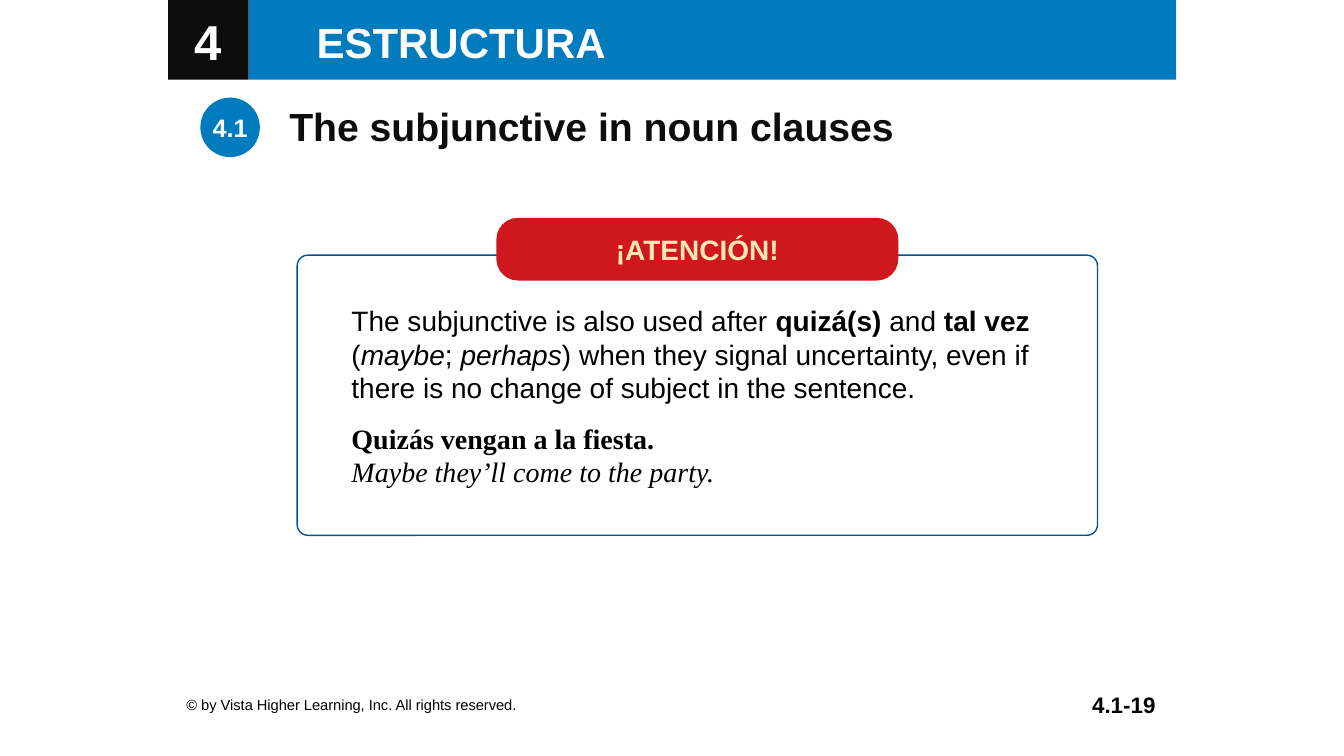
from dataclasses import dataclass

from lxml import etree
from pptx import Presentation
from pptx.dml.color import RGBColor
from pptx.enum.shapes import MSO_SHAPE
from pptx.enum.text import MSO_ANCHOR, MSO_AUTO_SIZE, PP_ALIGN
from pptx.oxml.ns import qn
from pptx.util import Cm, Pt

RECT, OVAL, ROUND = MSO_SHAPE.RECTANGLE, MSO_SHAPE.OVAL, MSO_SHAPE.ROUNDED_RECTANGLE
TOP, MIDDLE = MSO_ANCHOR.TOP, MSO_ANCHOR.MIDDLE
LEFT, CENTER, RIGHT = PP_ALIGN.LEFT, PP_ALIGN.CENTER, PP_ALIGN.RIGHT
FIXED = MSO_AUTO_SIZE.NONE


@dataclass(frozen=True)
class Theme:
    sans: str = "Arial"
    serif: str = "Times New Roman"
    blue: str = "007BBE"
    navy: str = "005297"
    red: str = "CE181E"
    cream: str = "FFE7B6"
    ink: str = "0D0D0D"
    black: str = "000000"
    white: str = "FFFFFF"
    unit: float = 35
    strand: float = 30
    title: float = 28
    body: float = 20
    label: float = 18
    page: float = 16
    small: float = 10.5


THEME = Theme()


def style(para, size, color, bold=None, italic=None, face=THEME.sans, align=LEFT):
    para.alignment = align
    font = para.font
    font.name, font.size = face, Pt(size)
    font.bold, font.italic = bold, italic
    font.color.rgb = RGBColor.from_string(color)


def inset(frame, left=0.25, top=0.13, right=0.25, bottom=0.13):
    frame.margin_left, frame.margin_top = Cm(left), Cm(top)
    frame.margin_right, frame.margin_bottom = Cm(right), Cm(bottom)


def shape(slide, kind, box, fill=None, line=None):
    item = slide.shapes.add_shape(kind, *map(Cm, box))
    item.shadow.inherit = False
    if fill:
        item.fill.solid()
        item.fill.fore_color.rgb = RGBColor.from_string(fill)
    else:
        item.fill.background()
    if line:
        item.line.color.rgb = RGBColor.from_string(line)
        item.line.width = Pt(1)
    else:
        item.line.fill.background()
    return item


def label(item, text, size, color, align=CENTER, bold=True, anchor=MIDDLE):
    frame = item.text_frame
    frame.word_wrap = True
    frame.auto_size = FIXED
    frame.vertical_anchor = anchor
    inset(frame)
    frame.text = text
    style(frame.paragraphs[0], size, color, bold, align=align)
    return frame


def header(slide, box):
    left, top, width, height = box
    side = 2.03
    shape(slide, RECT, (left + side, top, width - side, height), THEME.blue)
    unit = shape(slide, RECT, (left, top, side, height), THEME.ink)
    inset(label(unit, "4", THEME.unit, THEME.white, anchor=TOP), top=0.3, bottom=0.2)

    spot = (left + 3.13, top + 0.51, 8.46, 1.09)
    table = slide.shapes.add_table(1, 1, *map(Cm, spot)).table
    table.first_row = table.horz_banding = False
    cell = table.cell(0, 0)
    props = cell._tc.get_or_add_tcPr()
    for edge in ("a:lnL", "a:lnR", "a:lnT", "a:lnB"):
        etree.SubElement(etree.SubElement(props, qn(edge)), qn("a:noFill"))
    cell.fill.background()
    inset(cell, 0.61, 0, 0, 0)
    cell.text = "ESTRUCTURA"
    style(cell.text_frame.paragraphs[0], THEME.strand, THEME.white, True)


def heading(slide, box):
    left, top, width, height = box
    title = slide.shapes.title
    title.left, title.top = Cm(left + 1.99), Cm(top)
    title.width, title.height = Cm(width - 1.99), Cm(1.45)
    label(title, "The subjunctive in noun clauses", THEME.title, THEME.ink, LEFT, anchor=TOP)
    badge = shape(slide, OVAL, (left, top, height, height), THEME.blue)
    frame = label(badge, "4.1", THEME.label, THEME.white)
    inset(frame, 0, 0, 0, 0)
    frame.word_wrap = False


def notice(slide, box):
    left, top, width, height = box
    drop = 0.94
    card = shape(slide, ROUND, (left, top + drop, width, height - drop), line=THEME.navy)
    card.adjustments[0] = 0.038
    frame = card.text_frame
    frame.word_wrap = True
    frame.vertical_anchor = TOP
    inset(frame, 1.29, 1.14, 1.29)

    rule = frame.paragraphs[0]
    rule.space_after = Pt(12)
    style(rule, THEME.body, THEME.black)
    for text, bold, italic in (
        ("The subjunctive is also used after ", False, False),
        ("quizá(s)", True, False),
        (" and ", False, False),
        ("tal vez", True, False),
        (" (", False, False),
        ("maybe", False, True),
        ("; ", False, False),
        ("perhaps", False, True),
        (") when they signal uncertainty, even if there is no change "
         "of subject in the sentence.", False, False),
    ):
        run = rule.add_run()
        run.text = text
        run.font.bold, run.font.italic = bold, italic

    for text, bold in (
        ("Quizás vengan a la fiesta.", True),
        ("Maybe they’ll come to the party.", False),
    ):
        para = frame.add_paragraph()
        para.text = text
        style(para, THEME.body, THEME.black, bold, not bold, THEME.serif)

    wide = 10.13
    tab = shape(slide, ROUND, (left + (width - wide) / 2, top, wide, 1.58), THEME.red)
    tab.adjustments[0] = 0.344
    label(tab, "¡ATENCIÓN!", THEME.body, THEME.cream)


def footer(slide, box):
    left, top, width, height = box
    wide = 7.65
    page = slide.shapes.add_textbox(*map(Cm, (left + width - wide, top, wide, height)))
    label(page, "4.1-19", THEME.page, THEME.black, RIGHT)
    credit = slide.shapes.add_textbox(*map(Cm, (left, top, 16.38, height)))
    label(credit, "© by Vista Higher Learning, Inc. All rights reserved.",
          THEME.small, THEME.black, LEFT, False)


def main():
    deck = Presentation()
    deck.slide_width, deck.slide_height = Cm(33.87), Cm(19.05)
    slide = deck.slides.add_slide(deck.slide_layouts[5])
    header(slide, (4.24, 0, 25.4, 2.01))
    heading(slide, (5.05, 2.46, 22.28, 1.5))
    notice(slide, (7.49, 5.49, 20.17, 8))
    footer(slide, (4.45, 17.32, 24.92, 0.89))
    deck.save("out.pptx")


if __name__ == "__main__":
    main()
